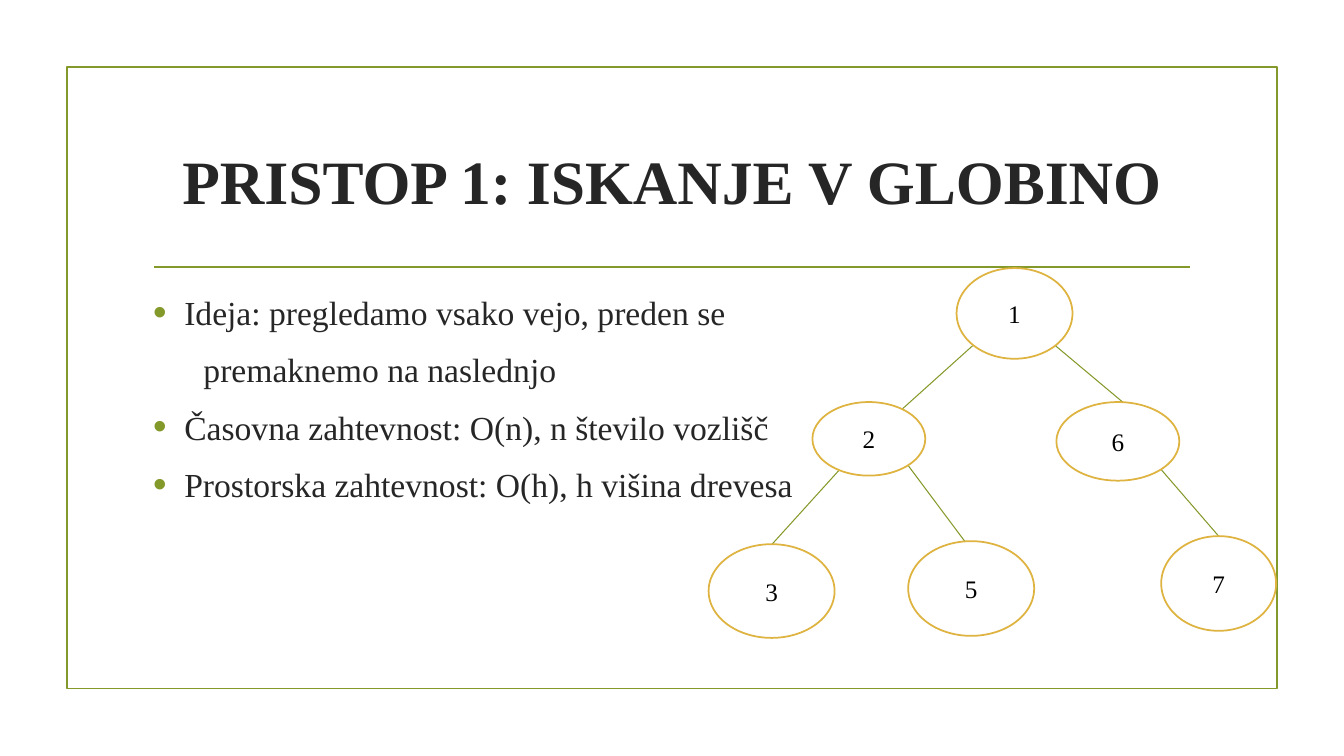
"""Build a slide on depth-first search with a small binary tree."""
from lxml import etree
from pptx import Presentation
from pptx import util as u
from pptx.dml.color import RGBColor
from pptx.enum import shapes, text
from pptx.oxml.ns import qn

COLORS = {"green": "83992A", "gold": "DEB340", "ink": "262626", "black": "000000", "white": "FFFFFF"}
FONT = "Times New Roman"

presentation = Presentation()
presentation.slide_width, presentation.slide_height = u.Inches(13.33), u.Inches(7.5)
slide = presentation.slides.add_slide(presentation.slide_layouts[6])
CELL = presentation.slide_width / 40


def grid(*cells):
    return [u.Emu(round(cell * CELL)) for cell in cells]


def style(paragraph, size, color, bold=False):
    font = paragraph.font
    font.name, font.size, font.bold = FONT, u.Pt(size), bold
    font.color.rgb = RGBColor.from_string(COLORS[color])


frame = slide.shapes.add_shape(shapes.MSO_SHAPE.RECTANGLE, *grid(2, 2, 36, 18.5))
frame.shadow.inherit = False
frame.fill.background()
frame.line.color.rgb = RGBColor.from_string(COLORS["green"])
frame.line.width = u.Pt(1.25)

title = slide.shapes.add_textbox(*grid(4.26, 3.21, 31.5, 4.29)).text_frame
title.word_wrap = True
title.vertical_anchor = text.MSO_ANCHOR.MIDDLE
heading = title.paragraphs[0]
heading.text = "PRISTOP 1: ISKANJE V GLOBINO"
heading.alignment = text.PP_ALIGN.CENTER
style(heading, 44, "ink", bold=True)

body = slide.shapes.add_textbox(*grid(4.26, 8.55, 31.5, 10.8)).text_frame
body.word_wrap = True
points = [
    ("Ideja: pregledamo vsako vejo, preden se", True),
    ("premaknemo na naslednjo", False),
    ("Časovna zahtevnost: O(n), n število vozlišč", True),
    ("Prostorska zahtevnost: O(h), h višina drevesa", True),
]
for index, (wording, bulleted) in enumerate(points):
    paragraph = body.add_paragraph() if index else body.paragraphs[0]
    paragraph.text = wording
    properties = paragraph._p.get_or_add_pPr()
    margin, = grid(0.93 if bulleted else 1.5)
    properties.set("marL", str(margin))
    properties.set("indent", str(-margin if bulleted else 0))
    if bulleted:
        color = etree.SubElement(properties, qn("a:buClr"))
        etree.SubElement(color, qn("a:srgbClr"), val=COLORS["green"])
        etree.SubElement(properties, qn("a:buSzPct"), val="115000")
        etree.SubElement(properties, qn("a:buFont"), typeface="Arial")
        etree.SubElement(properties, qn("a:buChar"), char="•")
    paragraph.space_before = u.Pt(6 if index else 0)
    paragraph.space_after = u.Pt(6)
    style(paragraph, 24, "ink")

lines = [
    (4.59, 7.95, 35.43, 7.95, 1.25),
    (28.95, 10.29, 26.85, 12.18, 0.75),
    (31.41, 10.29, 33.45, 12, 0.75),
    (24.99, 13.98, 22.98, 16.2, 0.75),
    (27.03, 13.86, 28.8, 16.23, 0.75),
    (34.56, 13.98, 36.27, 15.96, 0.75),
]
for *ends, width in lines:
    connector = slide.shapes.add_connector(shapes.MSO_CONNECTOR.STRAIGHT, *grid(*ends))
    connector.line.color.rgb = RGBColor.from_string(COLORS["green"])
    connector.line.width = u.Pt(width)
    etree.SubElement(connector._element.spPr, qn("a:effectLst"))

nodes = {
    "1": (28.47, 7.98, 3.45, 2.7),
    "2": (24.18, 11.97, 3.36, 2.19),
    "6": (31.44, 11.97, 3.66, 2.34),
    "3": (21.09, 16.2, 3.75, 2.79),
    "5": (27.03, 16.11, 3.75, 2.82),
    "7": (34.56, 15.96, 3.42, 2.82),
}
for label, place in nodes.items():
    node = slide.shapes.add_shape(shapes.MSO_SHAPE.OVAL, *grid(*place))
    node.shadow.inherit = False
    node.fill.solid()
    node.fill.fore_color.rgb = RGBColor.from_string(COLORS["white"])
    node.line.color.rgb = RGBColor.from_string(COLORS["gold"])
    node.line.width = u.Pt(1.25)
    node.text_frame.vertical_anchor = text.MSO_ANCHOR.MIDDLE
    paragraph = node.text_frame.paragraphs[0]
    paragraph.text = label
    paragraph.alignment = text.PP_ALIGN.CENTER
    style(paragraph, 18, "black")

presentation.save("out.pptx")
